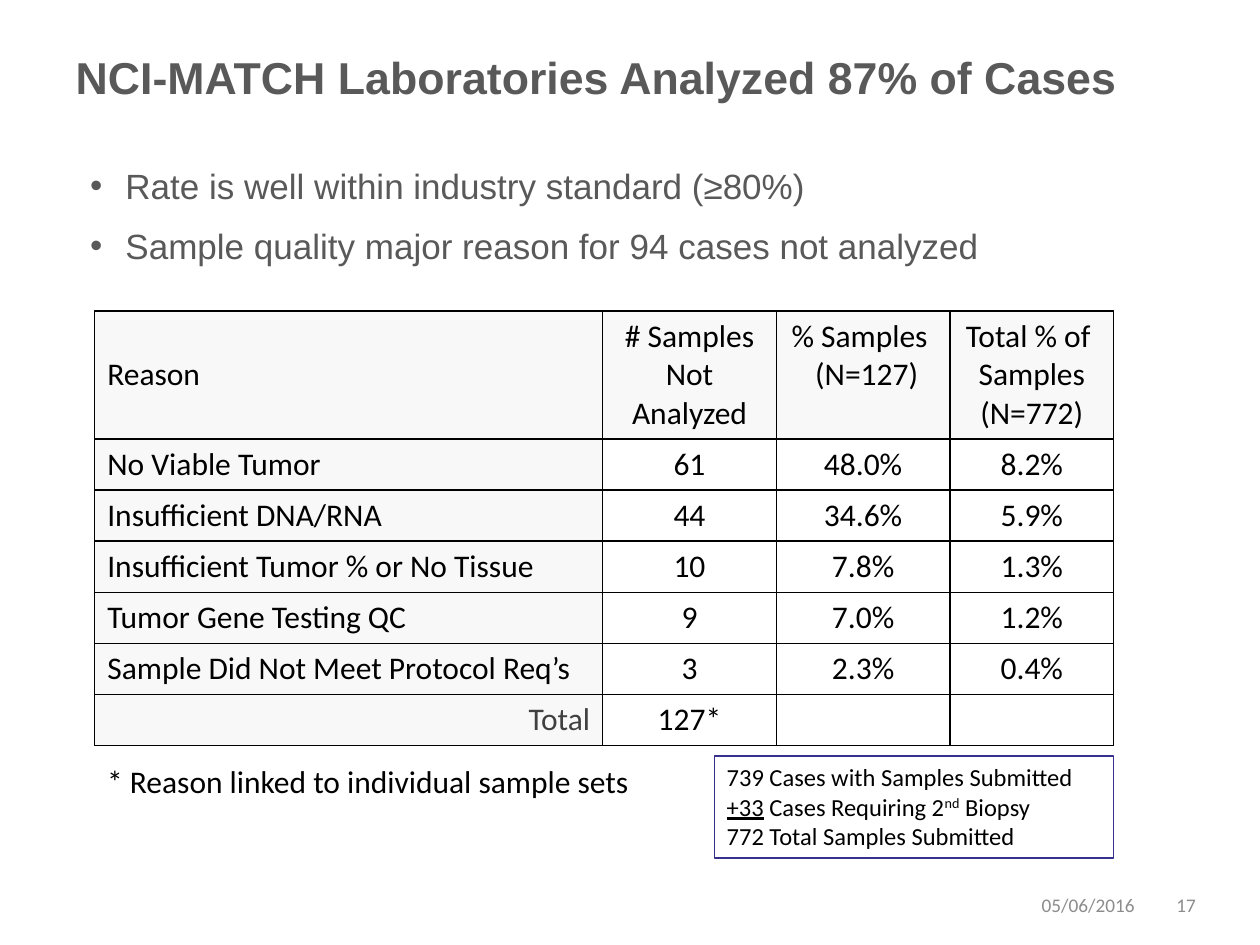
"""Build the slide on sample analysis rates of the NCI-MATCH laboratories."""
from lxml.etree import SubElement
from pptx import Presentation
from pptx.dml.color import RGBColor
from pptx.enum.shapes import MSO_SHAPE
from pptx.enum.text import MSO_ANCHOR as ANCHOR, PP_ALIGN as ALIGN
from pptx.oxml.ns import qn
from pptx.util import Cm, Pt

THEME = {
    "head_font": "Arial", "body_font": "Calibri",
    "grey": "595959", "black": "000000", "total": "404040", "footer": "8C8C8C",
    "label_fill": "F8F8F8", "box_line": "36318C",
    "title_size": 25.5, "bullet_size": 20, "body_size": 18, "box_size": 14, "footer_size": 11,
}

TITLE = "NCI-MATCH Laboratories Analyzed 87% of Cases"
BULLETS = [
    "Rate is well within industry standard (≥80%)",
    "Sample quality major reason for 94 cases not analyzed",
]
HEADER = [
    ["Reason"],
    ["# Samples Not Analyzed"],
    ["% Samples ", " (N=127)"],
    ["Total % of \nSamples", "(N=772)"],
]
ROWS = [
    ("No Viable Tumor", "61", "48.0%", "8.2%"),
    ("Insufficient DNA/RNA", "44", "34.6%", "5.9%"),
    ("Insufficient Tumor % or No Tissue", "10", "7.8%", "1.3%"),
    ("Tumor Gene Testing QC", "9", "7.0%", "1.2%"),
    ("Sample Did Not Meet Protocol Req’s", "3", "2.3%", "0.4%"),
    ("Total", "127*", "", ""),
]
COL_WIDTHS = [10.24, 3.5, 3.5, 3.3]
HEADER_HEIGHT, ROW_HEIGHT = 2.58, 1.03
FOOTNOTE = "* Reason linked to individual sample sets"
CASE_COUNT = [
    ("739 Cases with Samples Submitted\n", {}),
    ("+33", {"underline": True}),
    (" Cases Requiring 2", {}),
    ("nd", {"raised": True}),
    (" Biopsy\n772 Total Samples Submitted", {}),
]
FOOTERS = [
    ("17", (23.34, 17.73, 1.02, 1.02), ALIGN.RIGHT),
    ("05/06/2016", (20.75, 17.73, 2.79, 1.02), ALIGN.LEFT),
]


def add_run(p, text, font, size, color, bold, underline=None, raised=False):
    for i, part in enumerate(text.split("\n")):
        if i:
            p.add_line_break()
        if part:
            r = p.add_run()
            r.text = part
            r.font.name, r.font.size = font, Pt(size)
            r.font.bold, r.font.underline = bold, underline
            r.font.color.rgb = RGBColor.from_string(color)
            if raised:
                r.font._element.set("baseline", "30000")


def add_bullet(p):
    pPr = p._p.get_or_add_pPr()
    pPr.set("marL", str(Cm(0.71)))
    pPr.set("indent", str(-Cm(0.71)))
    SubElement(pPr, qn("a:buFont")).set("typeface", "Arial")
    SubElement(pPr, qn("a:buChar")).set("char", "•")


def write(tf, paragraphs, font=THEME["body_font"], size=THEME["body_size"], color=THEME["black"],
          bold=False, align=ALIGN.LEFT, anchor=None, bullet=False):
    tf.word_wrap = True
    if anchor is not None:
        tf.vertical_anchor = anchor
    for i, runs in enumerate(paragraphs):
        p = tf.add_paragraph() if i else tf.paragraphs[0]
        if bullet:
            add_bullet(p)
            p.line_spacing = 1.1
            p.space_before, p.space_after = Pt(4 if i else 0), Pt(4)
        p.alignment = align
        for text, style in [(runs, {})] if isinstance(runs, str) else runs:
            add_run(p, text, font, size, color, bold, **style)


def add_text(slide, place, paragraphs, **fmt):
    sp = slide.shapes.add_textbox(*map(Cm, place))
    write(sp.text_frame, paragraphs, **fmt)


def border_cell(cell):
    tcPr = cell._tc.get_or_add_tcPr()
    for i, side in enumerate(("a:lnL", "a:lnR", "a:lnT", "a:lnB")):
        ln = tcPr.makeelement(qn(side), {"w": str(Pt(1))})
        fill = SubElement(ln, qn("a:solidFill"))
        SubElement(fill, qn("a:srgbClr")).set("val", THEME["black"])
        tcPr.insert(i, ln)


def add_reasons(slide):
    cells = [HEADER] + [[[text] for text in row] for row in ROWS]
    heights = [HEADER_HEIGHT] + [ROW_HEIGHT] * len(ROWS)
    place = (1.91, 6.27, sum(COL_WIDTHS), sum(heights))
    table = slide.shapes.add_table(len(cells), len(COL_WIDTHS), *map(Cm, place)).table
    table.first_row = table.horz_banding = False
    for col, width in zip(table.columns, COL_WIDTHS):
        col.width = Cm(width)
    for r, (row, height) in enumerate(zip(cells, heights)):
        table.rows[r].height = Cm(height)
        for c, paragraphs in enumerate(row):
            cell = table.cell(r, c)
            is_total = paragraphs == ["Total"]
            align = ALIGN.RIGHT if is_total else ALIGN.CENTER if c else ALIGN.LEFT
            write(cell.text_frame, paragraphs, align=align,
                  color=THEME["total" if is_total else "black"])
            if r == 0 and c < 2:
                cell.vertical_anchor = ANCHOR.MIDDLE
            if r == 0 or c == 0:
                cell.fill.solid()
                cell.fill.fore_color.rgb = RGBColor.from_string(THEME["label_fill"])
            else:
                cell.fill.background()
            border_cell(cell)


def add_case_box(slide):
    sp = slide.shapes.add_shape(MSO_SHAPE.RECTANGLE, *map(Cm, (14.4, 15.24, 8.05, 2.06)))
    sp.shadow.inherit = False
    sp.fill.background()
    sp.line.color.rgb = RGBColor.from_string(THEME["box_line"])
    sp.line.width = Pt(0.75)
    write(sp.text_frame, [CASE_COUNT], size=THEME["box_size"], anchor=ANCHOR.TOP)


def main():
    prs = Presentation()
    prs.slide_width, prs.slide_height = Cm(25.4), Cm(19.05)
    slide = prs.slides.add_slide(prs.slide_layouts[5])
    title = slide.shapes.title
    title.left, title.top, title.width, title.height = map(Cm, (1.27, 0.76, 22.86, 1.57))
    heading = {"font": THEME["head_font"], "color": THEME["grey"]}
    write(title.text_frame, [TITLE], size=THEME["title_size"], bold=True,
          anchor=ANCHOR.MIDDLE, **heading)
    add_reasons(slide)
    add_text(slide, (1.57, 3.1, 22.15, 3.17), BULLETS, size=THEME["bullet_size"],
             bullet=True, **heading)
    add_case_box(slide)
    add_text(slide, (1.91, 15.24, 11.23, 1.02), [FOOTNOTE])
    for text, place, align in FOOTERS:
        add_text(slide, place, [text], size=THEME["footer_size"], color=THEME["footer"],
                 align=align, anchor=ANCHOR.MIDDLE)
    prs.save("out.pptx")


if __name__ == "__main__":
    main()
